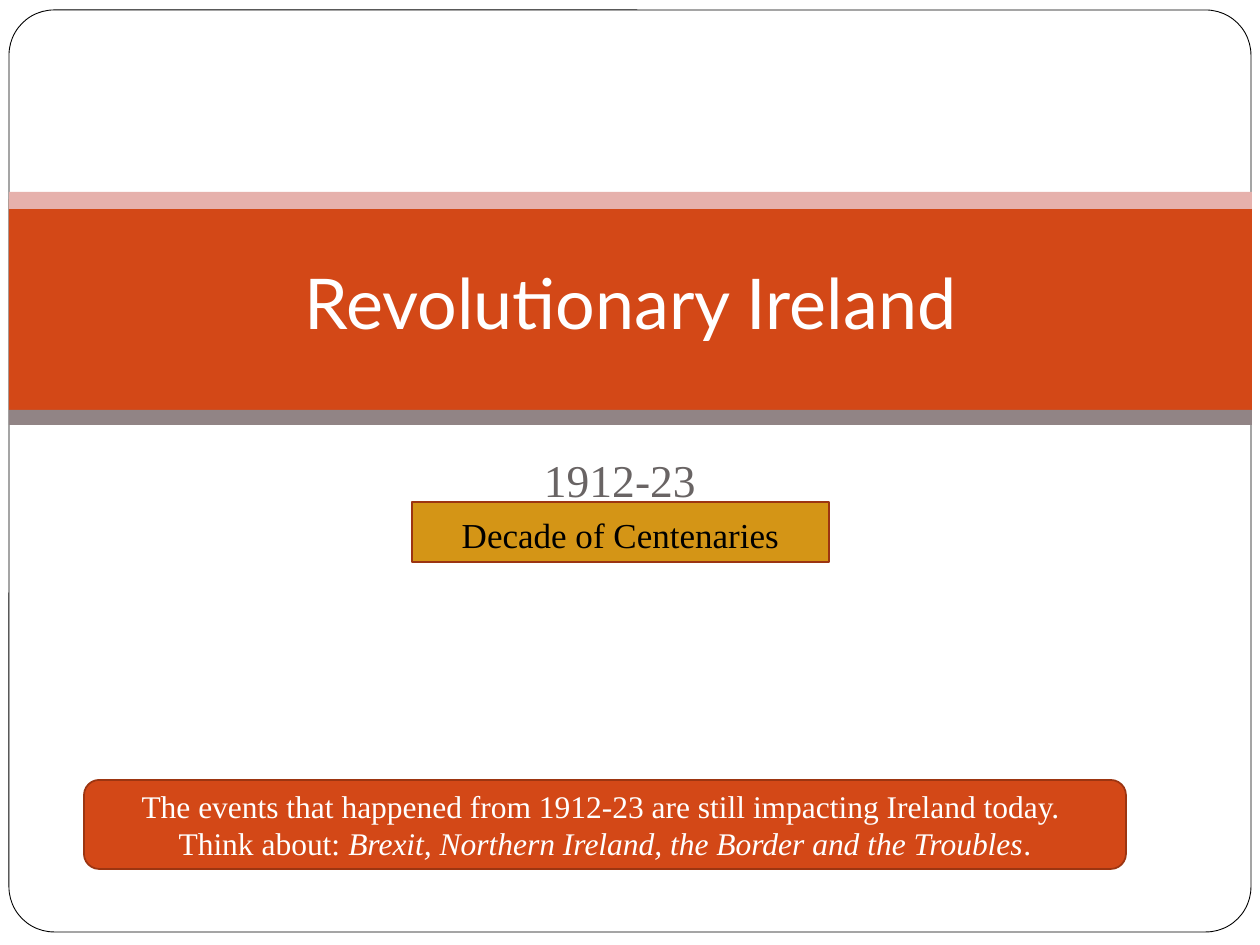
from pptx import Presentation
from pptx.dml.color import RGBColor
from pptx.enum.shapes import MSO_SHAPE
from pptx.enum.text import MSO_ANCHOR, MSO_AUTO_SIZE, PP_ALIGN
from pptx.util import Pt

SCALE = 914400 / 126
WHITE = RGBColor(0xFF, 0xFF, 0xFF)
BLACK = RGBColor(0x00, 0x00, 0x00)
RUST = RGBColor(0xD3, 0x48, 0x17)
BROWN = RGBColor(0x9C, 0x35, 0x11)
PINK = RGBColor(0xE6, 0xB1, 0xAC)
MAUVE = RGBColor(0x91, 0x84, 0x85)
GOLD = RGBColor(0xD4, 0x95, 0x16)
GREY = RGBColor(0x69, 0x64, 0x64)


def px(num):
    return round(num * SCALE)


def write(frame, *lines, size=18, color=WHITE, font="Times New Roman",
          anchor=MSO_ANCHOR.MIDDLE, top=6, bottom=6):
    frame.word_wrap = True
    frame.auto_size = MSO_AUTO_SIZE.NONE
    frame.vertical_anchor = anchor
    frame.margin_left = frame.margin_right = px(13)
    frame.margin_top, frame.margin_bottom = px(top), px(bottom)
    for num, line in enumerate(lines):
        para = frame.add_paragraph() if num else frame.paragraphs[0]
        para.alignment = PP_ALIGN.CENTER
        for text, slant in line:
            run = para.add_run()
            run.text = text
            run.font.size = Pt(size)
            run.font.name = font
            run.font.color.rgb = color
            run.font.italic = slant


class Deck:
    def __init__(self):
        self.show = Presentation()
        self.show.slide_width, self.show.slide_height = px(1260), px(945)
        self.slide = self.show.slides.add_slide(self.show.slide_layouts[5])
        self.shapes = self.slide.shapes

    def box(self, area, fill, line=None, width=1, round_by=None):
        kind = MSO_SHAPE.RECTANGLE if round_by is None else MSO_SHAPE.ROUNDED_RECTANGLE
        shape = self.shapes.add_shape(kind, *map(px, area))
        shape.shadow.inherit = False
        shape.fill.solid()
        shape.fill.fore_color.rgb = fill
        if round_by is not None:
            shape.adjustments[0] = round_by
        if line is None:
            shape.line.fill.background()
        else:
            shape.line.color.rgb = line
            shape.line.width = Pt(width)
        return shape.text_frame

    def label(self, area):
        return self.shapes.add_textbox(*map(px, area)).text_frame

    def title(self, area):
        shape = self.shapes.title
        shape.left, shape.top, shape.width, shape.height = map(px, area)
        shape.element.getparent().append(shape.element)
        return shape.text_frame


def main():
    deck = Deck()
    deck.box((9, 10, 1242, 922), WHITE, BLACK, 0.5, 0.049)
    for top, high, fill in ((199, 211, RUST), (192, 17, PINK), (410, 15, MAUVE)):
        deck.box((9, top, 1243, high), fill)

    write(deck.title((95, 204, 1071, 203)), [("Revolutionary Ireland", False)],
          size=40, font="Lato", bottom=13)
    write(deck.label((179, 441, 882, 221)), [("1912-23", False)],
          size=26, color=GREY, anchor=MSO_ANCHOR.TOP, top=11)
    write(deck.box((412, 502, 417, 60), GOLD, BROWN),
          [("Decade of Centenaries", False)],
          size=20, color=BLACK, anchor=MSO_ANCHOR.BOTTOM)
    write(deck.box((84, 780, 1042, 89), RUST, BROWN, round_by=0.17),
          [("The events that happened from 1912-23 are still impacting Ireland today. ", False)],
          [("Think about: ", False),
           ("Brexit, Northern Ireland, the Border and the Troubles", True),
           (".", False)])
    deck.show.save("out.pptx")


if __name__ == "__main__":
    main()
